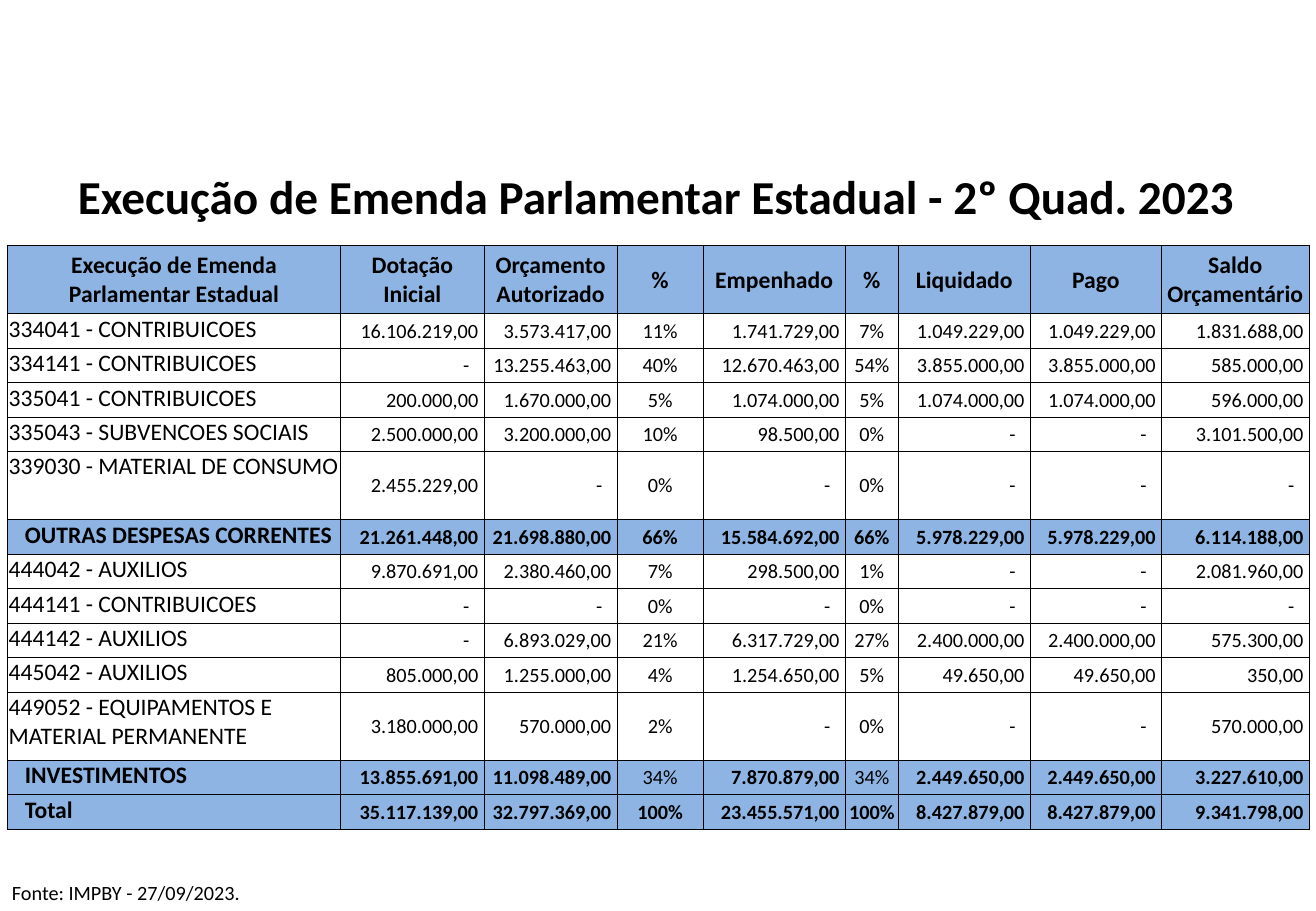
import pptx
import pptx.util
import pptx.dml.color
import pptx.enum.text
import pptx.oxml
import pptx.oxml.ns

Cm = pptx.util.Cm
Pt = pptx.util.Pt
ALIGN = pptx.enum.text.PP_ALIGN
ANCHOR = pptx.enum.text.MSO_ANCHOR

FONT = "Calibri"
BLACK = "000000"
WHITE = "FFFFFF"
BLUE = "8DB4E2"

COLUMN_WIDTHS = [6.96, 3, 2.78, 1.8, 2.97, 1.11, 2.76, 2.74, 3.09]
PERCENT_COLUMNS = (3, 5)
LINE_HEIGHT = 0.72
DOUBLE_HEIGHT = 1.43
DOUBLE_ROWS = ("339030", "449052")
GROUPS = ("OUTRAS DESPESAS CORRENTES", "INVESTIMENTOS", "Total")

HEADERS = ["Execução de Emenda Parlamentar Estadual", "Dotação Inicial",
           "Orçamento\nAutorizado", "%", "Empenhado", "%", "Liquidado",
           "Pago", "Saldo\nOrçamentário"]

BUDGET = [
    ["334041 - CONTRIBUICOES", "16.106.219,00", "3.573.417,00", "11%",
     "1.741.729,00", "7%", "1.049.229,00", "1.049.229,00", "1.831.688,00"],
    ["334141 - CONTRIBUICOES", "-", "13.255.463,00", "40%",
     "12.670.463,00", "54%", "3.855.000,00", "3.855.000,00", "585.000,00"],
    ["335041 - CONTRIBUICOES", "200.000,00", "1.670.000,00", "5%",
     "1.074.000,00", "5%", "1.074.000,00", "1.074.000,00", "596.000,00"],
    ["335043 - SUBVENCOES SOCIAIS", "2.500.000,00", "3.200.000,00", "10%",
     "98.500,00", "0%", "-", "-", "3.101.500,00"],
    ["339030 - MATERIAL DE CONSUMO", "2.455.229,00", "-", "0%",
     "-", "0%", "-", "-", "-"],
    ["OUTRAS DESPESAS CORRENTES", "21.261.448,00", "21.698.880,00", "66%",
     "15.584.692,00", "66%", "5.978.229,00", "5.978.229,00", "6.114.188,00"],
    ["444042 - AUXILIOS", "9.870.691,00", "2.380.460,00", "7%",
     "298.500,00", "1%", "-", "-", "2.081.960,00"],
    ["444141 - CONTRIBUICOES", "-", "-", "0%",
     "-", "0%", "-", "-", "-"],
    ["444142 - AUXILIOS", "-", "6.893.029,00", "21%",
     "6.317.729,00", "27%", "2.400.000,00", "2.400.000,00", "575.300,00"],
    ["445042 - AUXILIOS", "805.000,00", "1.255.000,00", "4%",
     "1.254.650,00", "5%", "49.650,00", "49.650,00", "350,00"],
    ["449052 - EQUIPAMENTOS E MATERIAL PERMANENTE", "3.180.000,00",
     "570.000,00", "2%", "-", "0%", "-", "-", "570.000,00"],
    ["INVESTIMENTOS", "13.855.691,00", "11.098.489,00", "34%",
     "7.870.879,00", "34%", "2.449.650,00", "2.449.650,00", "3.227.610,00"],
    ["Total", "35.117.139,00", "32.797.369,00", "100%",
     "23.455.571,00", "100%", "8.427.879,00", "8.427.879,00", "9.341.798,00"],
]


def color(value):
    return pptx.dml.color.RGBColor.from_string(value)


def write(frame, text, size, bold=False, align=ALIGN.LEFT):
    frame.text = text
    frame.word_wrap = True
    for para in frame.paragraphs:
        para.alignment = align
        for span in para.runs:
            span.font.name = FONT
            span.font.size = Pt(size)
            span.font.bold = bold
            span.font.color.rgb = color(BLACK)


def add_text(page, left, top, width, height, text, size, **style):
    box = page.shapes.add_textbox(Cm(left), Cm(top), Cm(width), Cm(height))
    write(box.text_frame, text, size, **style)
    box.text_frame.auto_size = pptx.enum.text.MSO_AUTO_SIZE.SHAPE_TO_FIT_TEXT


def add_borders(cell):
    properties = cell._tc.get_or_add_tcPr()
    for side in ("lnL", "lnR", "lnT", "lnB"):
        properties.append(pptx.oxml.parse_xml(
            f'<a:{side} {pptx.oxml.ns.nsdecls("a")} w="{Pt(0.5)}"><a:solidFill>'
            f'<a:srgbClr val="{BLACK}"/></a:solidFill></a:{side}>'))


def fill_cell(cell, text, fill, size, bold, align, anchor, left=0.02, right=0.02):
    write(cell.text_frame, text, size, bold, align)
    cell.vertical_anchor = anchor
    cell.margin_left = Cm(left)
    cell.margin_right = Cm(right)
    cell.margin_top = Cm(0.02)
    cell.margin_bottom = 0
    add_borders(cell)
    cell.fill.solid()
    cell.fill.fore_color.rgb = color(fill)


def fill_budget_row(table, row, values):
    label = values[0]
    is_group = label in GROUPS
    fill = BLUE if is_group else WHITE
    fill_cell(table.cell(row, 0), label, fill, 14, is_group, ALIGN.LEFT,
              ANCHOR.TOP, left=0.36 if is_group else 0.02)
    for column, value in enumerate(values[1:], 1):
        cell = table.cell(row, column)
        if column in PERCENT_COLUMNS:
            bold = is_group and label != "INVESTIMENTOS"
            fill_cell(cell, value, fill, 12, bold, ALIGN.CENTER, ANCHOR.MIDDLE)
        else:
            fill_cell(cell, value, fill, 12, is_group, ALIGN.RIGHT,
                      ANCHOR.MIDDLE, right=0.31 if value == "-" else 0.12)


def add_budget_table(page, left, top):
    heights = [DOUBLE_HEIGHT] + [
        DOUBLE_HEIGHT if values[0].startswith(DOUBLE_ROWS) else LINE_HEIGHT
        for values in BUDGET]
    table = page.shapes.add_table(
        len(heights), len(COLUMN_WIDTHS), Cm(left), Cm(top),
        Cm(sum(COLUMN_WIDTHS)), Cm(sum(heights))).table
    table.first_row = False
    table.horz_banding = False
    for column, width in zip(table.columns, COLUMN_WIDTHS):
        column.width = Cm(width)
    for row, height in zip(table.rows, heights):
        row.height = Cm(height)
    for column, header in enumerate(HEADERS):
        fill_cell(table.cell(0, column), header, BLUE, 14, True,
                  ALIGN.CENTER, ANCHOR.MIDDLE)
    for row, values in enumerate(BUDGET, 1):
        fill_budget_row(table, row, values)


def main():
    deck = pptx.Presentation()
    deck.slide_width = Cm(27.51)
    deck.slide_height = Cm(19.05)
    page = deck.slides.add_slide(deck.slide_layouts[6])
    add_text(page, 0.23, 3.38, 26.95, 1.45,
             "Execução de Emenda Parlamentar Estadual - 2º Quad. 2023",
             28, bold=True, align=ALIGN.CENTER)
    add_budget_table(page, 0.16, 5.13)
    add_text(page, 0, 18.29, 21, 0.76, "Fonte: IMPBY - 27/09/2023.", 12)
    deck.save("out.pptx")


if __name__ == "__main__":
    main()
